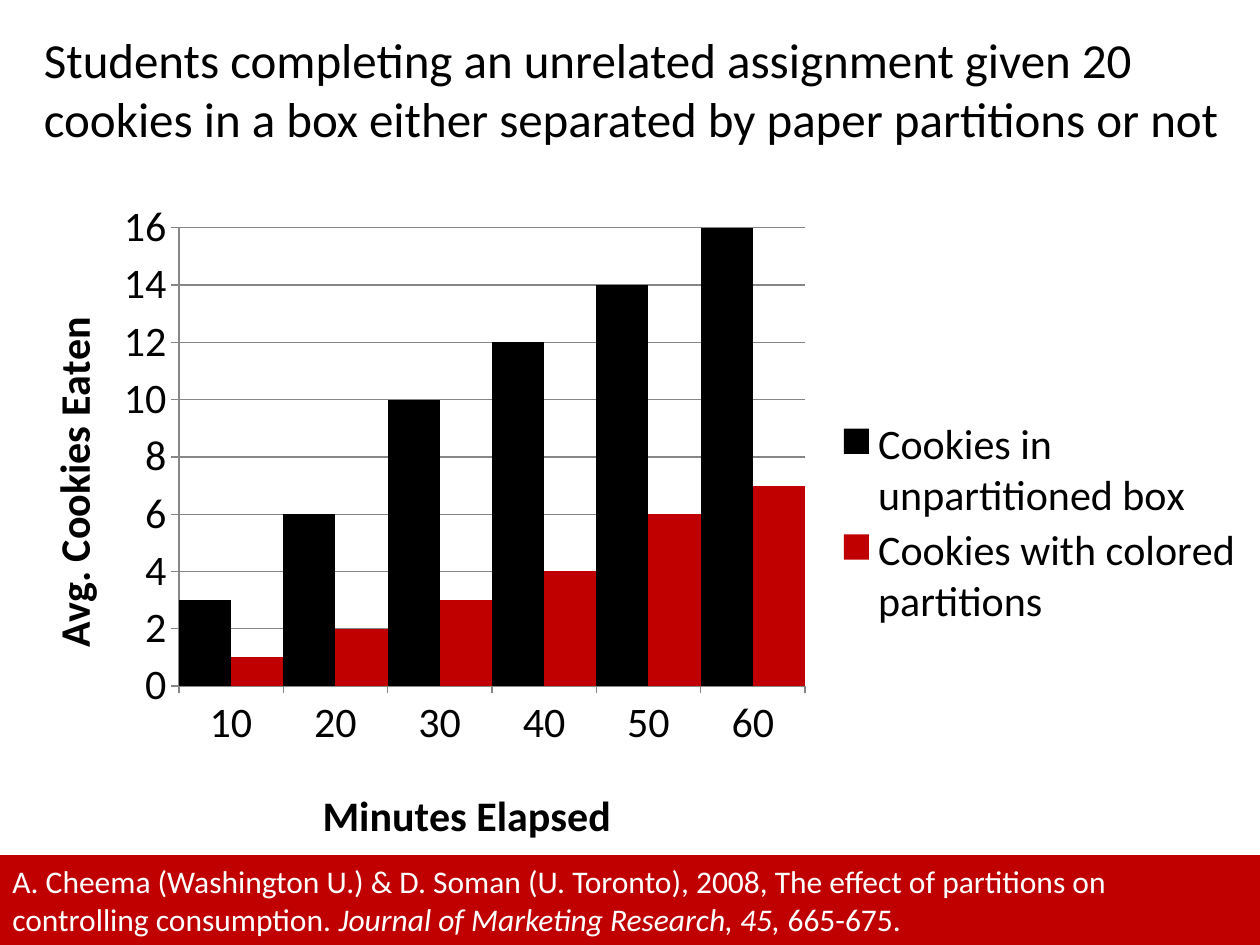
import pptx
import pptx.chart.data
import pptx.dml.color
import pptx.enum.chart
import pptx.enum.shapes
import pptx.enum.text
import pptx.oxml
import pptx.oxml.ns
import pptx.util

# Content
TITLE = ("Students completing an unrelated assignment given 20 "
         "cookies in a box either separated by paper partitions or not")
TIMES = ["10", "20", "30", "40", "50", "60"]
SERIES = [
    ("Cookies in unpartitioned box", [3, 6, 10, 12, 14, 16], "black"),
    ("Cookies with colored partitions", [1, 2, 3, 4, 6, 7], "red"),
]
AXES = {"x": "Minutes Elapsed", "y": "Avg. Cookies Eaten"}
SOURCE = [  # text, italic
    ("A. Cheema (Washington U.) & D. Soman (U. Toronto), 2008, "
     "The effect of partitions on controlling consumption. ", False),
    ("Journal of Marketing Research, 45, ", True),
    ("665-675.", False),
]

THEME = {
    "font": "Calibri", "title": 28, "chart": 24, "note": 18,
    "black": "000000", "red": "C00000", "white": "FFFFFF", "gray": "868686",
}

# Slide size in inches; boxes are shares of it: left, top, width, height
WIDE, HIGH = 10, 7.5
FOOT = 0.905
BOXES = {
    "title": (0.025, 0.025, 0.975, 0.165),
    "chart": (0, 0.2, 1, 0.71),
    "foot": (0, FOOT, 1, 1 - FOOT),
}
# Shares of the chart area
PLOT = (0.142, 0.058, 0.497, 0.683)
LEGEND = (0.66, 0.34, 0.33, 0.32)
X_SPOT = (0.25, 0.88)
Y_SPOT = (0.03, 0.18)


def box(name):
    sides = (WIDE, HIGH, WIDE, HIGH)
    return [pptx.util.Inches(s * n) for s, n in zip(BOXES[name], sides)]


def color(name):
    return pptx.dml.color.RGBColor.from_string(THEME[name])


def style(font, size, tint="black", bold=False, italic=False):
    font.name = THEME["font"]
    font.size = pptx.util.Pt(THEME[size])
    font.color.rgb = color(tint)
    font.bold, font.italic = bold, italic


def paint(fill, tint):
    fill.solid()
    fill.fore_color.rgb = color(tint)


def place(part, index, shares, inner=False):
    """Give a chart part a fixed position within the chart area."""
    for old in part.findall(pptx.oxml.ns.qn("c:layout")):
        part.remove(old)
    tags = '<c:layoutTarget val="inner"/>' if inner else ""
    tags += "".join(f'<c:{k}Mode val="edge"/>' for k in "xy")
    tags += "".join(f'<c:{k} val="{v}"/>' for k, v in zip("xywh", shares))
    part.insert(index, pptx.oxml.parse_xml(
        f'<c:layout {pptx.oxml.ns.nsdecls("c")}><c:manualLayout>{tags}'
        '</c:manualLayout></c:layout>'))


def dress(axis, text, spot):
    """Set up an axis with its title, ticks and lines."""
    frame = axis.axis_title.text_frame
    frame.text = text
    style(frame.paragraphs[0].runs[0].font, "chart", bold=True)
    place(axis.axis_title._element, 1, spot)
    style(axis.tick_labels.font, "chart")
    axis.major_tick_mark = pptx.enum.chart.XL_TICK_MARK.OUTSIDE
    axis.minor_tick_mark = pptx.enum.chart.XL_TICK_MARK.NONE
    axis.format.line.color.rgb = color("gray")


def add_title(slide):
    frame = slide.shapes.add_textbox(*box("title")).text_frame
    frame.word_wrap = True
    frame.text = TITLE
    style(frame.paragraphs[0].runs[0].font, "title")


def add_chart(slide):
    data = pptx.chart.data.CategoryChartData()
    data.categories = TIMES
    for name, vals, tint in SERIES:
        data.add_series(name, vals)
    kind = pptx.enum.chart.XL_CHART_TYPE.COLUMN_CLUSTERED
    chart = slide.shapes.add_chart(kind, *box("chart"), data).chart
    style(chart.font, "chart")
    chart.has_title = False

    # Columns
    plot = chart.plots[0]
    plot.gap_width, plot.overlap = 0, 0
    plot.vary_by_categories = False
    for bars, (name, vals, tint) in zip(plot.series, SERIES):
        paint(bars.format.fill, tint)
    place(chart._chartSpace.chart.plotArea, 0, PLOT, inner=True)

    # Axes
    dress(chart.category_axis, AXES["x"], X_SPOT)
    axis = chart.value_axis
    dress(axis, AXES["y"], Y_SPOT)
    axis.minimum_scale, axis.maximum_scale, axis.major_unit = 0, 16, 2
    axis.has_major_gridlines = True
    axis.major_gridlines.format.line.color.rgb = color("gray")

    # Legend
    chart.has_legend = True
    key = chart.legend
    key.position = pptx.enum.chart.XL_LEGEND_POSITION.RIGHT
    key.include_in_layout = False
    style(key.font, "chart")
    place(key._element, 1, LEGEND)


def add_foot(slide):
    kind = pptx.enum.shapes.MSO_SHAPE.RECTANGLE
    bar = slide.shapes.add_shape(kind, *box("foot"))
    bar.shadow.inherit = False
    paint(bar.fill, "red")
    bar.line.fill.background()
    frame = bar.text_frame
    frame.word_wrap = True
    frame.vertical_anchor = pptx.enum.text.MSO_ANCHOR.MIDDLE
    para = frame.paragraphs[0]
    para.alignment = pptx.enum.text.PP_ALIGN.LEFT
    for text, slant in SOURCE:
        run = para.add_run()
        run.text = text
        style(run.font, "note", "white", italic=slant)


def main():
    deck = pptx.Presentation()
    deck.slide_width = pptx.util.Inches(WIDE)
    deck.slide_height = pptx.util.Inches(HIGH)
    slide = deck.slides.add_slide(deck.slide_layouts[6])
    add_title(slide)
    add_chart(slide)
    add_foot(slide)
    deck.save("out.pptx")


if __name__ == "__main__":
    main()
